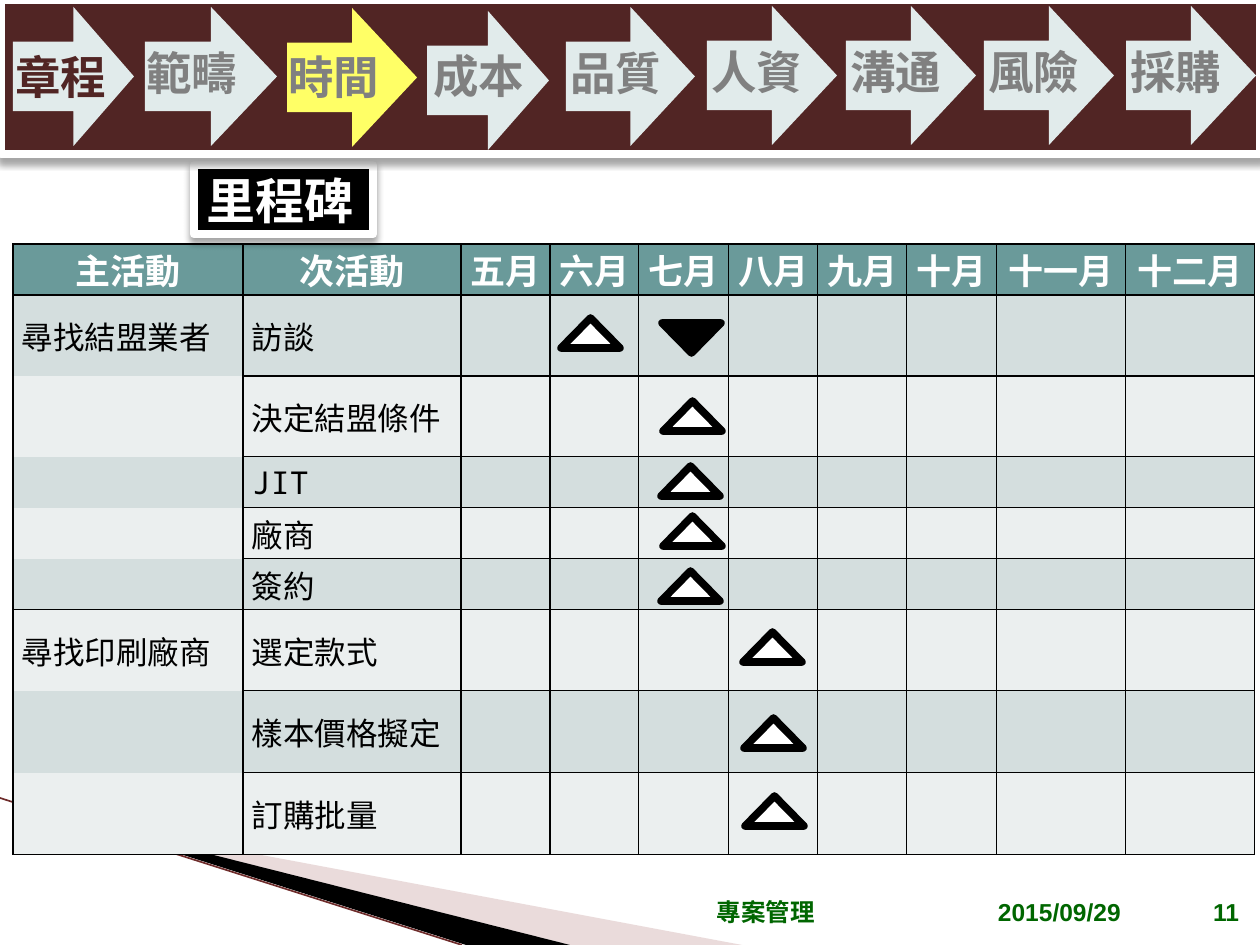
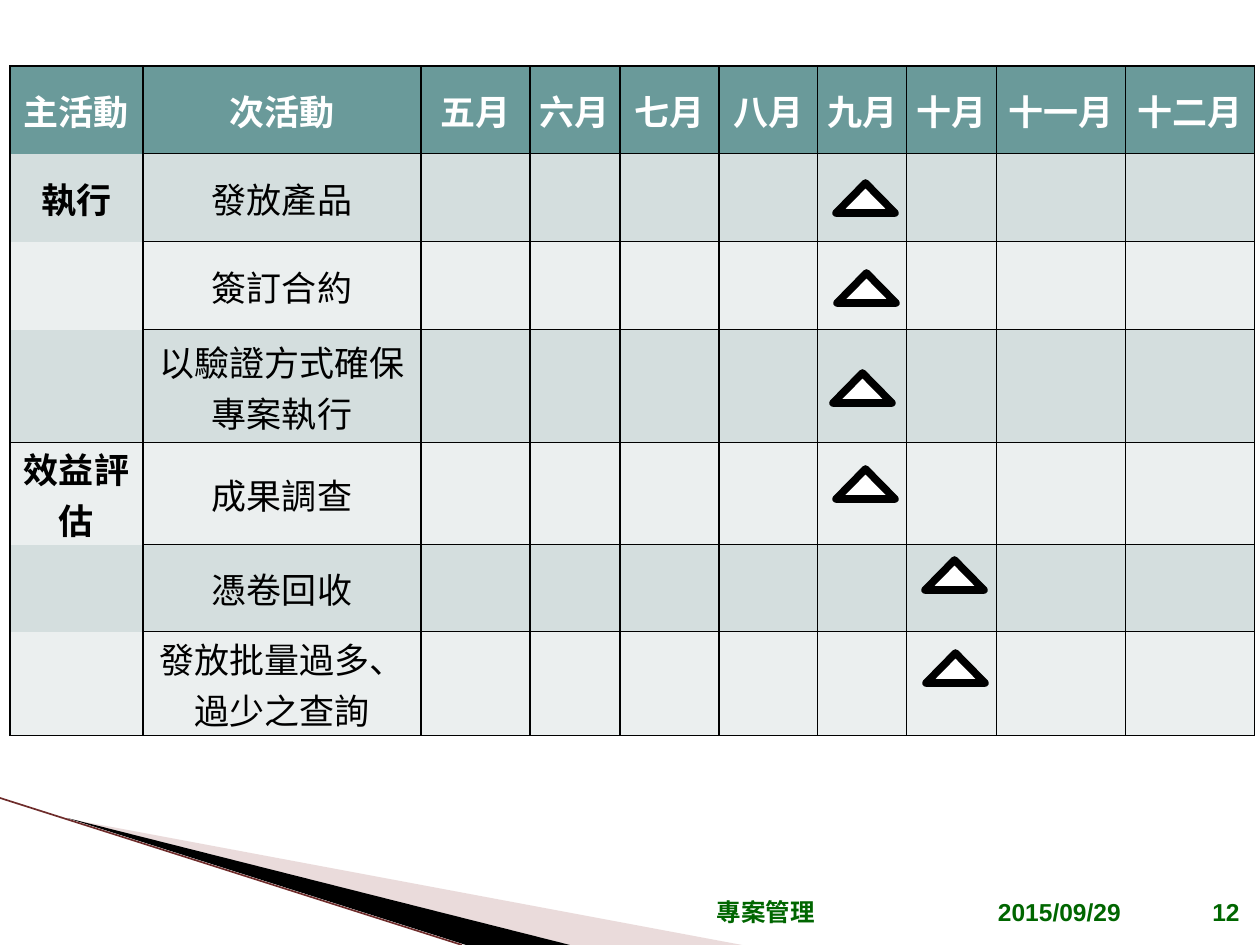
from lxml.etree import SubElement
from pptx import Presentation
from pptx.dml.color import RGBColor
from pptx.enum.shapes import MSO_CONNECTOR, MSO_SHAPE
from pptx.enum.text import MSO_ANCHOR, PP_ALIGN
from pptx.oxml.ns import qn
from pptx.util import Emu, Pt

EMU_PER_PX = 914400 / 126
BLACK = RGBColor(0x00, 0x00, 0x00)
WHITE = RGBColor(0xFF, 0xFF, 0xFF)
MAROON = RGBColor(0x51, 0x25, 0x24)
ROSE = RGBColor(0xCC, 0xA7, 0xA6)
EDGE_RED = RGBColor(0x6E, 0x2C, 0x2B)
PALE_ARROW = RGBColor(0xE1, 0xEB, 0xEB)
YELLOW = RGBColor(0xFF, 0xFF, 0x66)
GRAY = RGBColor(0x80, 0x80, 0x80)
GREEN = RGBColor(0x00, 0x66, 0x00)
TEAL = RGBColor(0x6A, 0x9A, 0x9A)
ROW_DARK = RGBColor(0xD4, 0xDE, 0xDE)
ROW_LIGHT = RGBColor(0xEB, 0xEF, 0xEF)

SANS, MONO, CJK = "Arial", "Noto Sans Mono", "Noto Sans CJK SC"
HEADINGS = ["主活動", "次活動", "五月", "六月", "七月", "八月",
            "九月", "十月", "十一月", "十二月"]

# label, arrow left, arrow top, arrow width, label left, label top
CHAPTERS = [
    ("章程", 13, 7, 121, 3, 43),
    ("範疇", 145, 7, 132, 134, 39),
    ("時間", 287, 8, 130, 276, 43),
    ("成本", 427, 11, 122, 421, 42),
    ("品質", 566, 7, 129, 558, 39),
    ("人資", 707, 6, 130, 699, 38),
    ("溝通", 846, 6, 130, 838, 38),
    ("風險", 984, 6, 130, 976, 38),
    ("採購", 1126, 6, 130, 1118, 38),
]

MILESTONE_ROWS = [
    ("尋找結盟業者", "訪談"), ("", "決定結盟條件"), ("", "JIT"),
    ("", "廠商"), ("", "簽約"), ("尋找印刷廠商", "選定款式"),
    ("", "樣本價格擬定"), ("", "訂購批量"),
]
EXECUTION_ROWS = [
    ("執行", "發放產品"), ("", "簽訂合約"), ("", "以驗證方式確保專案執行"),
    ("效益評估", "成果調查"), ("", "憑卷回收"), ("", "發放批量過多、過少之查詢"),
]


def px(length):
    return Emu(round(length * EMU_PER_PX))


def box(*lengths):
    return [px(length) for length in lengths]


def style_text(paragraph, size, color, font=SANS, bold=True, align=PP_ALIGN.LEFT):
    paragraph.alignment = align
    paragraph.font.size = Pt(size)
    paragraph.font.bold = bold
    paragraph.font.color.rgb = color
    paragraph.font.name = font
    defaults = paragraph._p.pPr.find(qn("a:defRPr"))
    SubElement(defaults, qn("a:ea"), typeface=CJK)


def add_shadow(shape):
    effects = shape._element.spPr.find(qn("a:effectLst"))
    shadow = SubElement(effects, qn("a:outerShdw"), blurRad=str(Pt(4)),
                        dist=str(Pt(3)), dir="5400000", rotWithShape="0")
    color = SubElement(shadow, qn("a:srgbClr"), val=str(BLACK))
    SubElement(color, qn("a:alpha"), val="35000")


def paint(shape, fill, line=None, width=0):
    shape.shadow.inherit = False
    shape.fill.solid()
    shape.fill.fore_color.rgb = fill
    if line is None:
        shape.line.fill.background()
    else:
        shape.line.color.rgb = line
        shape.line.width = Pt(width)


def add_panel(slide, kind, bounds, fill, line=None, width=0):
    shape = slide.shapes.add_shape(kind, *box(*bounds))
    paint(shape, fill, line, width)
    return shape


def add_label(slide, bounds, text, size, color, align=PP_ALIGN.LEFT,
              anchor=MSO_ANCHOR.TOP):
    frame = slide.shapes.add_textbox(*box(*bounds)).text_frame
    frame.word_wrap = align == PP_ALIGN.CENTER
    frame.vertical_anchor = anchor
    frame.text = text
    style_text(frame.paragraphs[0], size, color, align=align)


def add_wedge(slide, points, fill):
    start, *others = points
    builder = slide.shapes.build_freeform(*start, scale=EMU_PER_PX)
    builder.add_line_segments(others, close=True)
    wedge = builder.convert_to_shape()
    paint(wedge, fill)
    return wedge


def add_backdrop(slide):
    rose = add_wedge(slide, [(69, 819), (742, 945), (570, 945)], ROSE)
    color = rose._element.spPr.find(qn("a:solidFill"))[0]
    SubElement(color, qn("a:alpha"), val="40000")
    add_wedge(slide, [(67, 818), (570, 945), (466, 945)], BLACK)
    edge = slide.shapes.add_connector(MSO_CONNECTOR.STRAIGHT, *box(0, 798, 462, 945))
    edge.line.color.rgb = EDGE_RED
    edge.line.width = Pt(0.95)
    SubElement(edge._element.spPr, qn("a:effectLst"))


def add_footer(slide, number):
    for left, width, text in [(927, 265, "2015/09/29"), (604, 324, "專案管理"),
                              (1192, 68, str(number))]:
        add_label(slide, (left, 883, width, 50), text, 14, GREEN,
                  PP_ALIGN.CENTER, MSO_ANCHOR.BOTTOM)


def set_borders(cell, drawn_sides):
    properties = cell._tc.get_or_add_tcPr()
    for index, side in enumerate("LRTB"):
        border = SubElement(properties, qn(f"a:ln{side}"), w=str(Pt(0.75)))
        if side in drawn_sides:
            fill = SubElement(border, qn("a:solidFill"))
            SubElement(fill, qn("a:srgbClr"), val=str(BLACK))
        else:
            SubElement(border, qn("a:noFill"))
        properties.insert(index, border)


def add_schedule(slide, left, top, widths, heights, rows, block_starts, styles):
    """styles holds text settings for the main and the sub activity columns."""
    frame = slide.shapes.add_table(len(rows) + 1, len(HEADINGS),
                                   *box(left, top, sum(widths), sum(heights)))
    table = frame.table
    table.first_row = table.horz_banding = False
    for column, width in zip(table.columns, widths):
        column.width = px(width)
    for row, height in zip(table.rows, heights):
        row.height = px(height)

    block_ends = {start - 1 for start in block_starts} | {len(rows)}
    for row_index, texts in enumerate([HEADINGS, *rows]):
        is_header = row_index == 0
        for column_index in range(len(HEADINGS)):
            cell = table.cell(row_index, column_index)
            cell.margin_left = cell.margin_right = px(9)
            cell.margin_top = cell.margin_bottom = 0
            cell.vertical_anchor = MSO_ANCHOR.MIDDLE
            cell.fill.solid()
            cell.fill.fore_color.rgb = (TEAL if is_header else
                                        ROW_DARK if row_index % 2 else ROW_LIGHT)
            # The main activity column is open between the rows of a block
            sides = "LRTB"
            if column_index == 0:
                sides = ("LR" + "T" * (row_index in block_starts)
                         + "B" * (row_index in block_ends))
            set_borders(cell, sides)
            if column_index < len(texts) and texts[column_index]:
                cell.text = texts[column_index]
                paragraph = cell.text_frame.paragraphs[0]
                if is_header:
                    style_text(paragraph, 20, WHITE, MONO, align=PP_ALIGN.CENTER)
                else:
                    style_text(paragraph, color=BLACK, **styles[column_index])


def add_milestones(slide, positions):
    for left, top in positions:
        add_panel(slide, MSO_SHAPE.ISOSCELES_TRIANGLE, (left, top, 59, 30),
                  WHITE, BLACK, 4.33)


def add_chapter_band(slide):
    band = add_panel(slide, MSO_SHAPE.RECTANGLE, (1, 0, 1259, 154), MAROON, WHITE, 5)
    add_shadow(band)
    for name, left, top, width, label_left, label_top in CHAPTERS:
        fill = YELLOW if name == "時間" else PALE_ARROW
        add_panel(slide, MSO_SHAPE.RIGHT_ARROW, (left, top, width, 139), fill)
        add_label(slide, (label_left, label_top, 127, 68), name, 26,
                  MAROON if name == "章程" else GRAY)


def add_title(slide, text):
    title = add_panel(slide, MSO_SHAPE.RECTANGLE, (194, 165, 179, 69), BLACK, WHITE, 5)
    add_shadow(title)
    frame = title.text_frame
    frame.word_wrap = False
    frame.vertical_anchor = MSO_ANCHOR.MIDDLE
    frame.text = text
    style_text(frame.paragraphs[0], 28, WHITE, CJK)


def start_slide(presentation):
    slide = presentation.slides.add_slide(presentation.slide_layouts[6])
    add_backdrop(slide)
    return slide


def build_milestone_slide(presentation):
    slide = start_slide(presentation)
    plain = dict(size=18, font=MONO, bold=False)
    add_schedule(slide, 13, 244, [230, 218, 89, 89, 90, 89, 89, 90, 129, 129],
                 [51, 81, 81, 51, 51, 51, 81, 82, 82],
                 MILESTONE_ROWS, {0, 1, 6}, [plain, plain])
    add_footer(slide, 11)
    add_title(slide, "里程碑")
    # Finished milestone, then the planned ones
    finished = add_panel(slide, MSO_SHAPE.ISOSCELES_TRIANGLE, (662, 323, 59, 30),
                         BLACK, BLACK, 4.33)
    finished.rotation = 180
    add_milestones(slide, [(561, 318), (663, 401), (661, 466), (663, 516),
                           (661, 571), (743, 632), (744, 718), (745, 796)])
    add_chapter_band(slide)


def build_execution_slide(presentation):
    slide = start_slide(presentation)
    main_style = dict(size=20, font=SANS, bold=True, align=PP_ALIGN.CENTER)
    add_schedule(slide, 10, 66, [133, 278, 109, 90, 99, 99, 89, 90, 129, 129],
                 [88, 88, 88, 113, 102, 87, 104],
                 EXECUTION_ROWS, {0, 4}, [main_style, {**main_style, "bold": False}])
    add_footer(slide, 12)
    add_milestones(slide, [(836, 183), (837, 273), (833, 373),
                           (836, 469), (925, 560), (926, 653)])


def main():
    presentation = Presentation()
    presentation.slide_width = px(1260)
    presentation.slide_height = px(945)
    build_milestone_slide(presentation)
    build_execution_slide(presentation)
    presentation.save("out.pptx")


if __name__ == "__main__":
    main()
